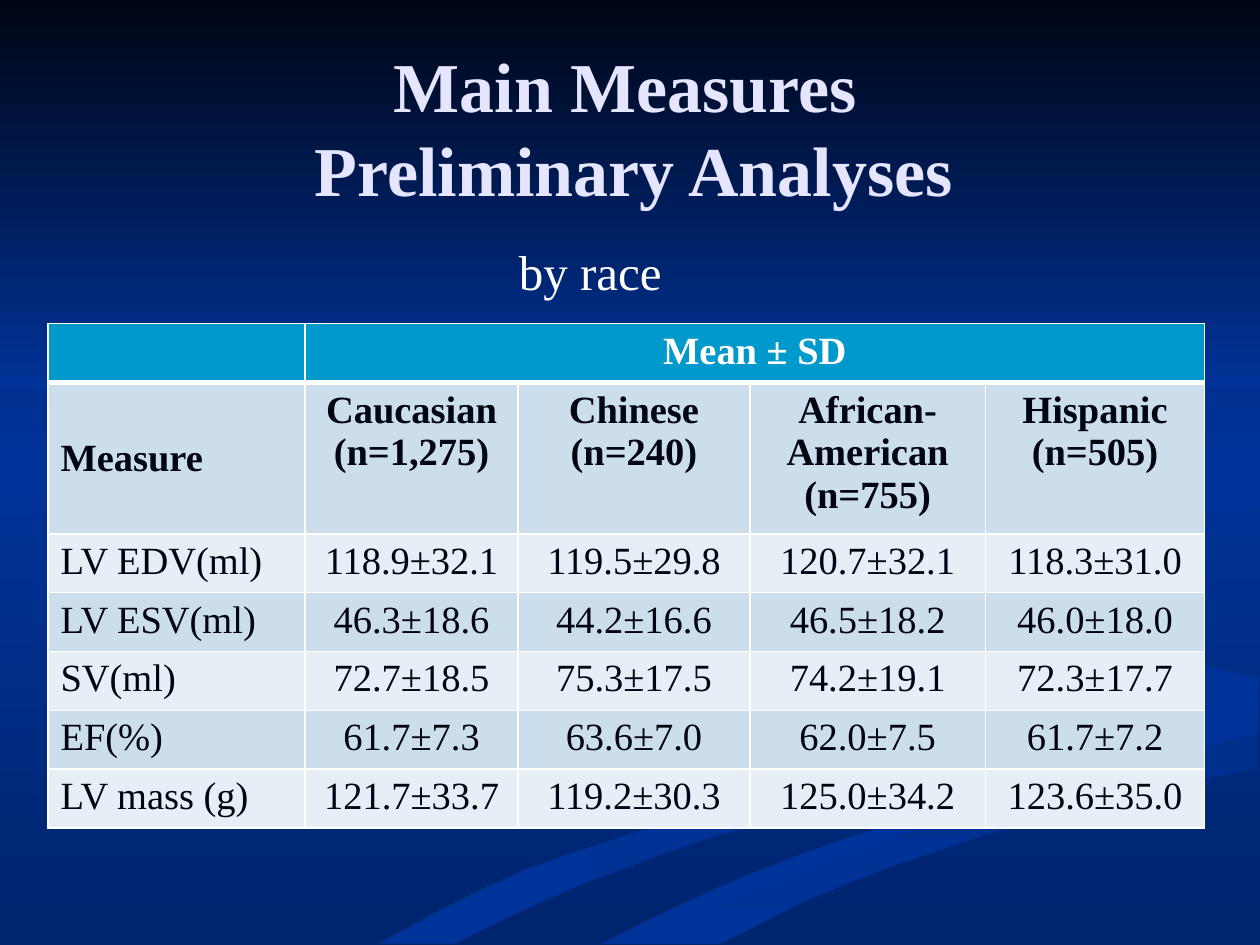
from copy import deepcopy
from lxml import etree
from pptx import Presentation
from pptx.dml.color import RGBColor
from pptx.enum.shapes import MSO_SHAPE
from pptx.enum.text import MSO_ANCHOR, PP_ALIGN
from pptx.oxml.ns import qn
from pptx.util import Pt

LEFT, MID = PP_ALIGN.LEFT, PP_ALIGN.CENTER
TOP, CENTER = MSO_ANCHOR.TOP, MSO_ANCHOR.MIDDLE
RECT = MSO_SHAPE.RECTANGLE

# Content
TITLE = "Main Measures \vPreliminary Analyses"
NOTE = "by race"
ROWS = [
    ("", "Mean ± SD", "", "", ""),
    ("Measure", "Caucasian\n(n=1,275)", "Chinese\n(n=240)",
     "African-American\n(n=755)", "Hispanic\n(n=505)"),
    ("LV EDV(ml)", "118.9±32.1", "119.5±29.8", "120.7±32.1", "118.3±31.0"),
    ("LV ESV(ml)", "46.3±18.6", "44.2±16.6", "46.5±18.2", "46.0±18.0"),
    ("SV(ml)", "72.7±18.5", "75.3±17.5", "74.2±19.1", "72.3±17.7"),
    ("EF(%)", "61.7±7.3", "63.6±7.0", "62.0±7.5", "61.7±7.2"),
    ("LV mass (g)", "121.7±33.7", "119.2±30.3", "125.0±34.2", "123.6±35.0"),
]
COLS = [146.9, 121.7, 132.5, 134.6, 125.3]
ROW_H = 29.5

THEME = {
    "font": "Times New Roman",
    "title": {"size": Pt(40), "bold": True, "color": "E5E5FF"},
    "note": {"size": Pt(28), "bold": False, "color": "FFFFFF"},
    "head": {"size": Pt(22), "bold": True, "color": "FFFFFF"},
    "label": {"size": Pt(22), "bold": True, "color": "000514"},
    "body": {"size": Pt(22), "bold": False, "color": "000514"},
    "fills": {"head": "0099CC", "odd": "CCDEEC", "even": "E7EFF6"},
    "rule": "FFFFFF",
    "blue": "003399",
    "back": ["00246D", "003399", "00246D"],
    "sky": ["000514", "003399"],
}

# Ribbon edges: knots of smooth curves on a grid of 0.72 pt
UNIT = Pt(0.72)
CREST = [(477, 749), (573, 703), (704, 655), (892, 605), (943, 570),
         (871, 530), (759, 498), (725, 464), (788, 422), (999, 387)]
INNER = [(999, 402), (850, 427), (781, 463), (832, 498), (999, 538)]
RIVER = [(998, 581), (832, 629), (696, 669), (570, 719), (503, 749)]
BANK = [(571, 749), (670, 702), (821, 651), (998, 609)]
WEST = [(300, 749), (417, 690), (579, 639), (759, 590), (786, 566),
        (697, 525), (594, 485), (575, 459)]
EAST = [(570, 472), (611, 499), (781, 553), (800, 581), (740, 618),
        (594, 656), (466, 700), (361, 749)]
FOLD = [(725, 464), (766, 512), (892, 553), (894, 605)]
TAIL = [(826, 496), (805, 472), (843, 448), (998, 420)]
HOOK = [(762, 233), (846, 279), (889, 335), (842, 378), (649, 420),
        (577, 462), (622, 500)]
BACK = [(593, 470), (683, 430), (825, 402), (894, 344), (843, 275), (762, 233)]

# Ribbons: gradient colours, clockwise angle, edges in turn
BLUE = THEME["blue"]
RIBBONS = [
    ([BLUE, "003193"], 0, [WEST, EAST]),
    ([BLUE, "003193"], 45, [FOLD, CREST[4:8]]),
    (["002F8C", BLUE], 90, [RIVER, BANK]),
    ([BLUE], 0, [CREST, INNER, RIVER]),
    (["003091", BLUE], 45, [INNER[:3], TAIL]),
    (["002F8E", BLUE], 45, [HOOK, BACK]),
]


def smooth(knots, steps=4):
    """Catmull-Rom curve through the knots."""
    ends = [knots[0], *knots, knots[-1]]
    dots = []
    for a, b, c, d in zip(ends, ends[1:], ends[2:], ends[3:]):
        for t in (i / steps for i in range(steps)):
            dots.append(tuple(
                q + t / 2 * (r - p + t * (2 * p - 5 * q + 4 * r - s
                                          + t * (3 * (q - r) + s - p)))
                for p, q, r, s in zip(a, b, c, d)))
    return dots + [knots[-1]]


def paint(fill, hues, ang=0):
    """Solid for one colour, linear gradient for two."""
    if len(hues) == 1:
        fill.solid()
        fill.fore_color.rgb = RGBColor.from_string(hues[0])
        return
    fill.gradient()
    fill.gradient_angle = -ang % 360
    for stop, hue, pos in zip(fill.gradient_stops, hues, (0, 1)):
        stop.color.rgb = RGBColor.from_string(hue)
        stop.position = pos


def plain(shape, hues, ang):
    paint(shape.fill, hues, ang)
    shape.line.fill.background()
    shape.shadow.inherit = False


def write(frame, text, style, align=MID):
    frame.text = text
    for para in frame.paragraphs:
        para.alignment = align
        for run in para.runs:
            run.font.name = THEME["font"]
            for key, val in style.items():
                if key == "color":
                    run.font.color.rgb = RGBColor.from_string(val)
                else:
                    setattr(run.font, key, val)


def label(slide, box, text, style, anchor):
    frame = slide.shapes.add_textbox(*map(Pt, box)).text_frame
    frame.word_wrap = True
    frame.vertical_anchor = anchor
    write(frame, text, style)
    return frame


def edge(cell, sides):
    props = cell._tc.get_or_add_tcPr()
    for side, wide in sides.items():
        line = etree.SubElement(props, qn("a:ln" + side), w=str(Pt(wide)))
        solid = etree.SubElement(line, qn("a:solidFill"))
        etree.SubElement(solid, qn("a:srgbClr"), val=THEME["rule"])


def backdrop(slide):
    back = THEME["back"]
    paint(slide.background.fill, back[:2], 90)
    stops = slide.element.find(".//" + qn("a:gsLst"))
    stops.append(deepcopy(stops[0]))
    stops[1].set("pos", "50000")
    stops[2].set("pos", "100000")
    for hues, ang, edges in RIBBONS:
        dots = [dot for knots in edges for dot in smooth(knots)]
        pen = slide.shapes.build_freeform(*dots[0], scale=UNIT)
        pen.add_line_segments(dots[1:], close=True)
        plain(pen.convert_to_shape(), hues, ang)
    sky = slide.shapes.add_shape(RECT, 0, 0, Pt(720), Pt(221.8))
    plain(sky, THEME["sky"], 90)


def grid(slide):
    table = slide.shapes.add_table(
        len(ROWS), len(COLS), Pt(27.4), Pt(185),
        Pt(sum(COLS)), Pt(ROW_H * len(ROWS))).table
    for col, wide in zip(table.columns, COLS):
        col.width = Pt(wide)
    for r, row in enumerate(ROWS):
        table.rows[r].height = Pt(ROW_H)
        tone = "head" if r == 0 else "odd" if r % 2 else "even"
        style = THEME[("head", "label")[r] if r < 2 else "body"]
        for c, text in enumerate(row):
            cell = table.cell(r, c)
            edge(cell, {"L": 1, "R": 1, "T": 3 if r == 1 else 1,
                        "B": 3 if r == 0 else 1})
            paint(cell.fill, [THEME["fills"][tone]])
            write(cell.text_frame, text, style, MID if c else LEFT)
    table.cell(0, 1).merge(table.cell(0, len(COLS) - 1))
    table.cell(1, 0).vertical_anchor = CENTER


def main():
    deck = Presentation()
    deck.slide_width, deck.slide_height = Pt(720), Pt(540)
    slide = deck.slides.add_slide(deck.slide_layouts[6])
    backdrop(slide)
    # Heading, table, caption
    head = label(slide, (38.2, 11.5, 648, 121.7), TITLE, THEME["title"], CENTER)
    head.paragraphs[0].line_spacing = Pt(48)
    grid(slide)
    label(slide, (275, 134.6, 124.6, 41), NOTE, THEME["note"], TOP)
    deck.save("out.pptx")


if __name__ == "__main__":
    main()
